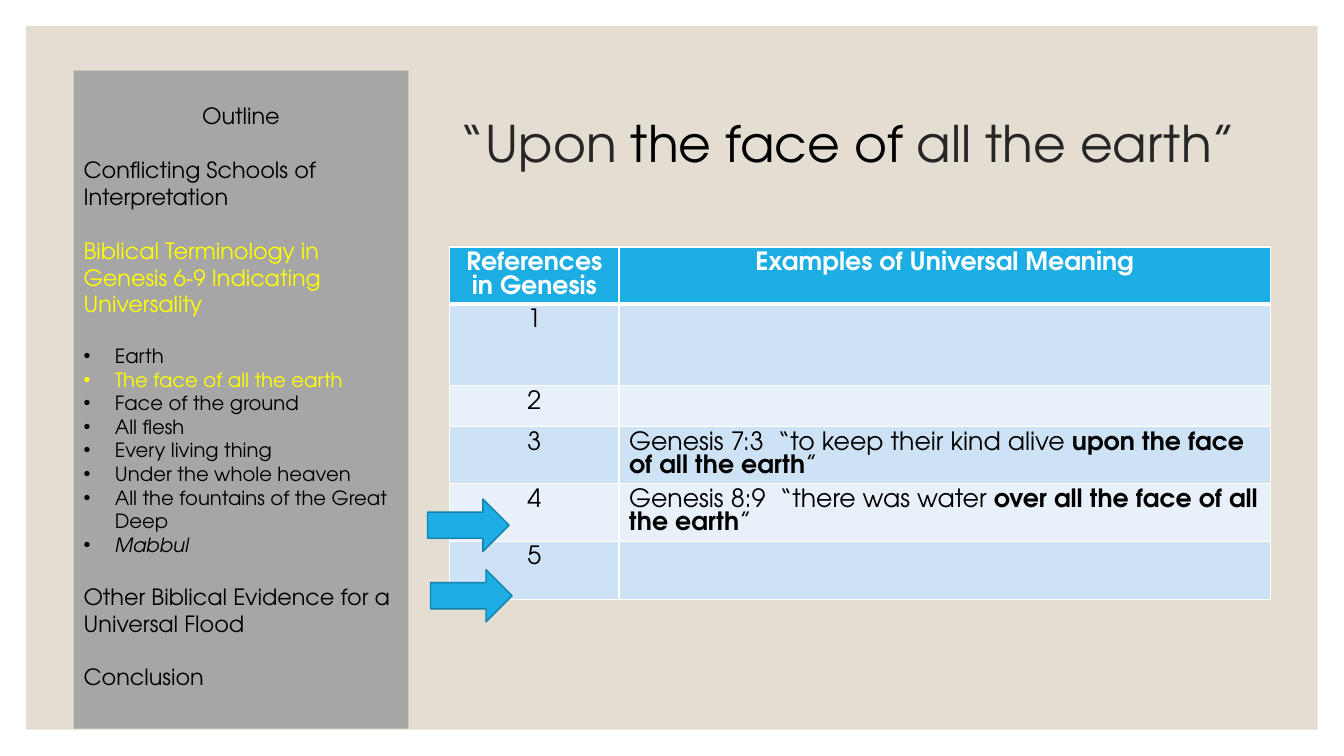
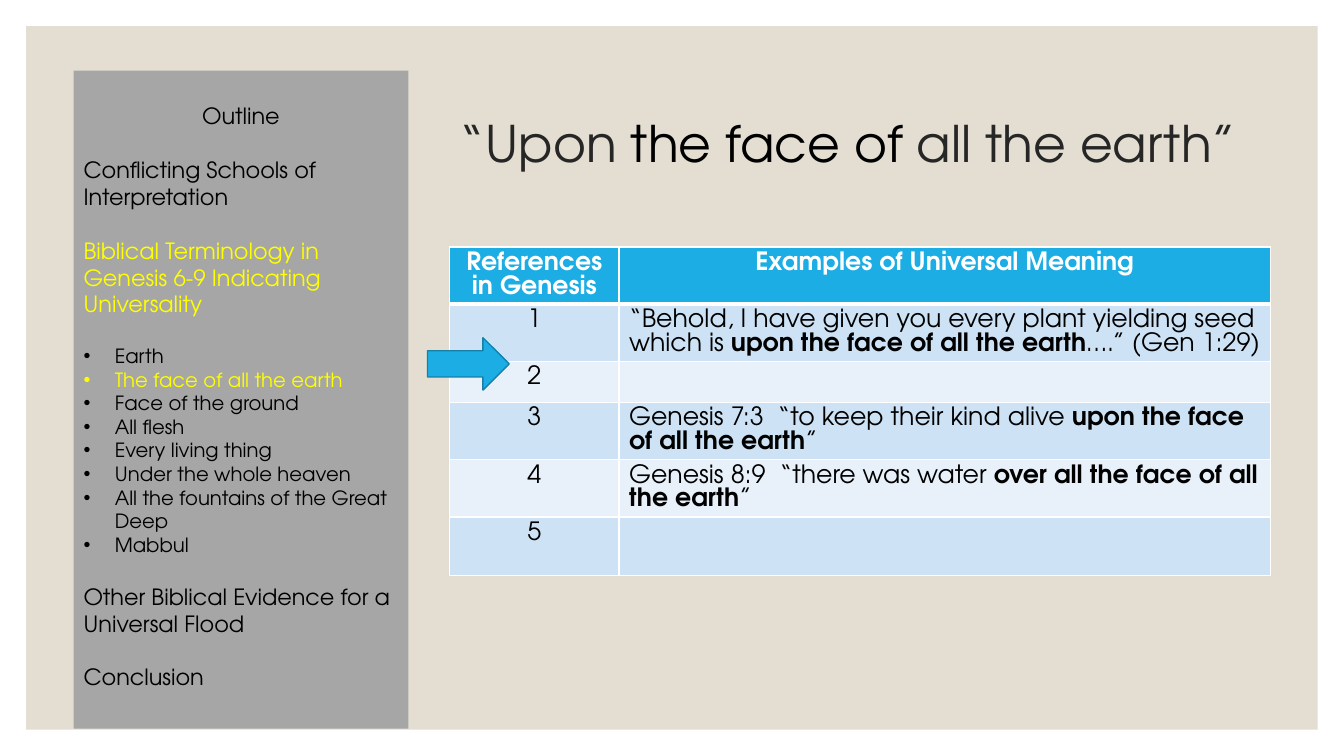
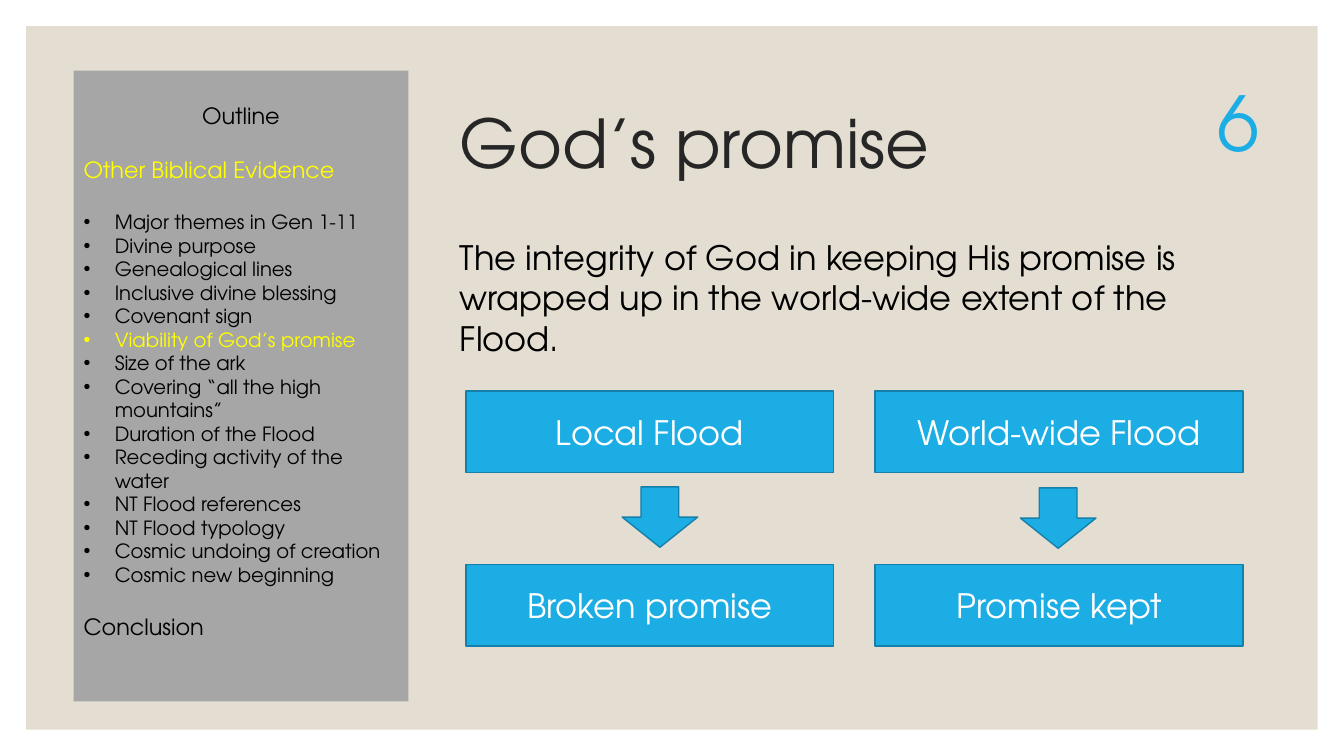
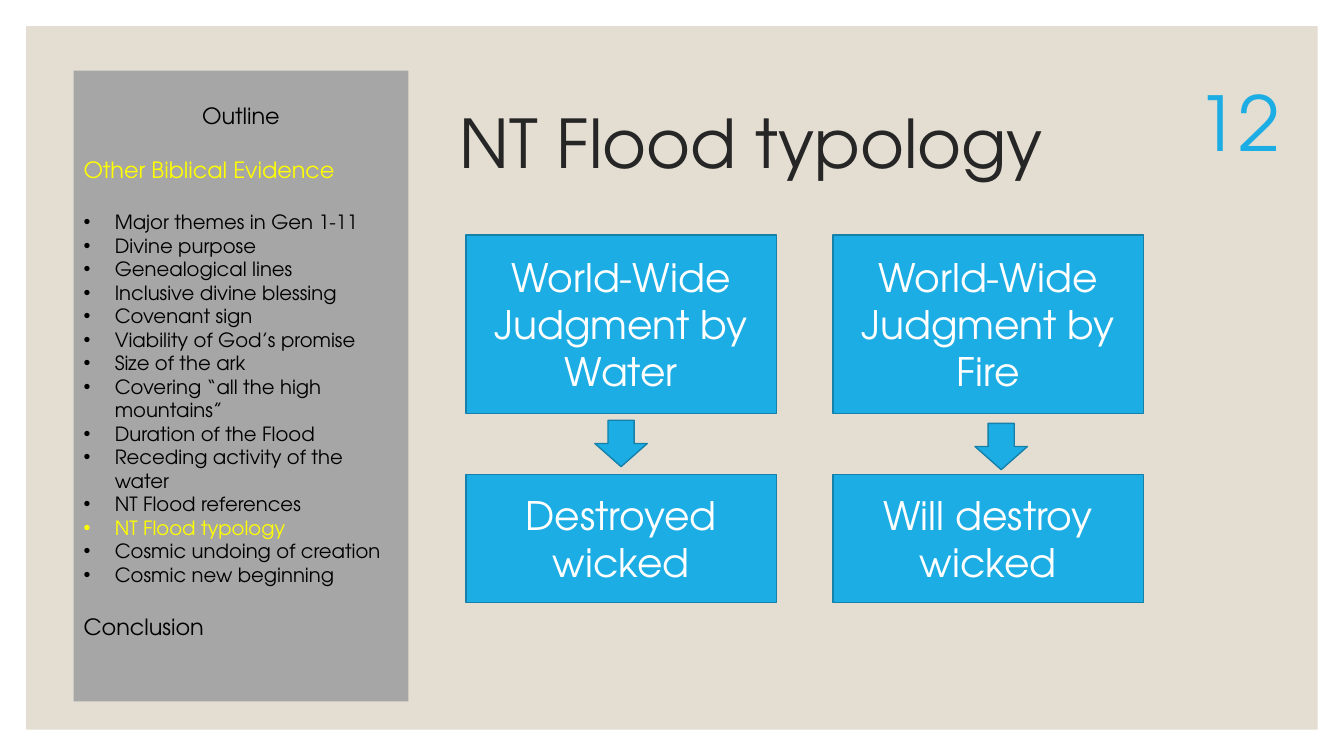
from lxml import etree
from pptx import Presentation
from pptx.dml.color import RGBColor
from pptx.enum.shapes import MSO_SHAPE
from pptx.enum.text import MSO_ANCHOR, MSO_AUTO_SIZE, PP_ALIGN
from pptx.oxml.ns import qn
from pptx.util import Inches, Pt

RECTANGLE = MSO_SHAPE.RECTANGLE
RIGHT_ARROW = MSO_SHAPE.RIGHT_ARROW
DOWN_ARROW = MSO_SHAPE.DOWN_ARROW
TOP, MIDDLE = MSO_ANCHOR.TOP, MSO_ANCHOR.MIDDLE
LEFT, CENTER = PP_ALIGN.LEFT, PP_ALIGN.CENTER
NO_FIT = MSO_AUTO_SIZE.NONE

FONT = "TeX Gyre Adventor"
COLORS = {
    "panel": "E3DED1", "sidebar": "A6A6A6", "blue": "1CADE4", "edge": "1580A9",
    "title": "262626", "black": "000000", "white": "FFFFFF", "highlight": "FFFF00",
    "odd row": "CDE3F5", "even row": "E8F1FA",
}
SIDEBAR_GAP = Pt(19.2)


def add_run(para, text, size, color, bold=False, italic=False):
    run = para.add_run()
    run.text = text
    run.font.name = FONT
    run.font.size = Pt(size)
    run.font.bold = bold
    run.font.italic = italic
    run.font.color.rgb = RGBColor.from_string(COLORS[color])


def add_box(slide, kind, left, top, width, height, fill="blue", line="edge"):
    """Add a flat preset shape, measured in inches; line None means no outline."""
    box = slide.shapes.add_shape(
        kind, Inches(left), Inches(top), Inches(width), Inches(height))
    box.shadow.inherit = False
    box.fill.solid()
    box.fill.fore_color.rgb = RGBColor.from_string(COLORS[fill])
    if line:
        box.line.color.rgb = RGBColor.from_string(COLORS[line])
        box.line.width = Pt(1)
    else:
        box.line.fill.background()
    return box


# Outline entries: (text, is a bullet)
TERMS_OUTLINE = [
    ("Conflicting Schools of Interpretation", False),
    ("Biblical Terminology in Genesis 6-9 Indicating Universality", False),
    ("Earth", True),
    ("The face of all the earth", True),
    ("Face of the ground", True),
    ("All flesh", True),
    ("Every living thing", True),
    ("Under the whole heaven", True),
    ("All the fountains of the Great Deep", True),
    ("Mabbul", True),
    ("Other Biblical Evidence for a Universal Flood", False),
    ("Conclusion", False),
]
EVIDENCE_OUTLINE = [
    ("Other Biblical Evidence", False),
    ("Major themes in Gen 1-11", True),
    ("Divine purpose", True),
    ("Genealogical lines", True),
    ("Inclusive divine blessing", True),
    ("Covenant sign", True),
    ("Viability of God’s promise", True),
    ("Size of the ark", True),
    ("Covering “all the high mountains”", True),
    ("Duration of the Flood", True),
    ("Receding activity of the water", True),
    ("NT Flood references", True),
    ("NT Flood typology", True),
    ("Cosmic undoing of creation", True),
    ("Cosmic new beginning", True),
    ("Conclusion", False),
]
TERMS_TITLE = [("“Upon ", "title"), ("the face of ", "black"), ("all the earth”", "title")]
TERMS_HIGHLIGHTS = {TERMS_OUTLINE[1][0], "The face of all the earth"}

# Verses: text before, bold phrase, text after
GENESIS_1 = ("“Behold, I have given you every plant yielding seed which is ",
             "upon the face of all the earth", "….” (Gen 1:29)")
GENESIS_7 = ("Genesis 7:3  “to keep their kind alive ",
             "upon the face of all the earth", "”")
GENESIS_8 = ("Genesis 8:9  “there was water ",
             "over all the face of all the earth", "”")

PAGES = [
    {
        "title": TERMS_TITLE, "title size": 36,
        "outline": TERMS_OUTLINE, "highlights": TERMS_HIGHLIGHTS, "italics": {"Mabbul"},
        "sidebar height": 6.53,
        "verses": [(), (), GENESIS_7, GENESIS_8, ()],
        "row heights": [0.56, 0.81, 0.4, 0.57, 0.57, 0.58],
        "arrows": [(RIGHT_ARROW, 4.24, 4.95, 0.81, 0.52),
                   (RIGHT_ARROW, 4.27, 5.65, 0.81, 0.52)],
    },
    {
        "title": TERMS_TITLE, "title size": 36,
        "outline": TERMS_OUTLINE, "highlights": TERMS_HIGHLIGHTS,
        "sidebar height": 6.53,
        "verses": [GENESIS_1, (), GENESIS_7, GENESIS_8, ()],
        "row heights": [0.56, 0.57, 0.4, 0.57, 0.57, 0.58],
        "arrows": [(RIGHT_ARROW, 4.24, 3.35, 0.81, 0.52)],
    },
    {
        "title": [("God’s promise", "title")], "title size": 48,
        "outline": EVIDENCE_OUTLINE,
        "highlights": {"Other Biblical Evidence", "Viability of God’s promise"},
        "sidebar height": 6.26,
        "body": "The integrity of God in keeping His promise is wrapped up in the "
                "world-wide extent of the Flood.",
        "number": "6", "number left": 11.97, "number width": 0.62,
        "box size": 24, "box width": 3.65, "box gap": 0.41,
        "box rows": [(3.88, 0.81, ["Local Flood", "World-wide Flood"]),
                     (5.6, 0.81, ["Broken promise", "Promise kept"])],
        "arrows": [(DOWN_ARROW, 6.17, 4.83, 0.75, 0.6),
                   (DOWN_ARROW, 10.12, 4.84, 0.75, 0.6)],
    },
    {
        "title": [("NT Flood typology", "title")], "title size": 48,
        "outline": EVIDENCE_OUTLINE,
        "highlights": {"Other Biblical Evidence", "NT Flood typology"},
        "sidebar height": 6.26,
        "number": "12", "number left": 11.76, "number width": 1.04,
        "box size": 28, "box width": 3.08, "box gap": 0.56,
        "box rows": [(2.33, 1.77, ["World-Wide\nJudgment by Water",
                                   "World-Wide Judgment by Fire"]),
                     (4.71, 1.27, ["Destroyed\nwicked", "Will destroy\nwicked"])],
        "arrows": [(DOWN_ARROW, 5.9, 4.17, 0.52, 0.46),
                   (DOWN_ARROW, 9.67, 4.2, 0.52, 0.46)],
    },
]

deck = Presentation()
deck.slide_width, deck.slide_height = Inches(13.33), Inches(7.5)
master = deck.slide_master
master_title = master.placeholders[0]
master_title.left, master_title.top = Inches(4.46), Inches(0.7)
master_title.width, master_title.height = Inches(8.14), Inches(1.51)

for page_index, page in enumerate(PAGES):
    slide = deck.slides.add_slide(deck.slide_layouts[1 if "body" in page else 5])

    if page_index == 0:
        # The background panel lives on the master, behind everything
        panel = add_box(slide, RECTANGLE, 0.26, 0.26, 12.81, 6.98, "panel", None)
        panel.element.nvSpPr.cNvPr.set("id", "20")
        master.shapes.element.insert(2, panel.element)

    title_frame = slide.shapes.title.text_frame
    title_frame.vertical_anchor = MIDDLE
    title_frame.auto_size = NO_FIT
    para = title_frame.paragraphs[0]
    para.alignment = LEFT
    para.line_spacing = 0.9
    for text, color in page["title"]:
        add_run(para, text, page["title size"], color)

    if "body" in page:
        body = slide.placeholders[1]
        body.left, body.top = Inches(4.46), Inches(2.3)
        body.width, body.height = Inches(8.14), Inches(4.43)
        body.text_frame.auto_size = NO_FIT
        para = body.text_frame.paragraphs[0]
        para.space_before = Pt(9)
        properties = para._p.get_or_add_pPr()
        properties.set("marL", "0")
        properties.set("indent", "0")
        etree.SubElement(properties, qn("a:buNone"))
        add_run(para, page["body"], 24, "black")

    if "verses" in page:
        heights = page["row heights"]
        table = slide.shapes.add_table(
            len(heights), 2, Inches(4.46), Inches(2.45),
            Inches(8.14), Inches(sum(heights))).table
        table.columns[0].width, table.columns[1].width = Inches(1.68), Inches(6.46)
        rows = [(("References in Genesis",), ("Examples of Universal Meaning",))]
        rows += [((str(number),), verse) for number, verse in enumerate(page["verses"], 1)]
        for row_index, row in enumerate(rows):
            table.rows[row_index].height = Inches(heights[row_index])
            is_header = row_index == 0
            fill = "blue" if is_header else "odd row" if row_index % 2 else "even row"
            for column_index, parts in enumerate(row):
                cell = table.cell(row_index, column_index)
                cell.fill.solid()
                cell.fill.fore_color.rgb = RGBColor.from_string(COLORS[fill])
                if is_header:
                    border = etree.Element(qn("a:lnB"), w=str(Pt(3)))
                    border_fill = etree.SubElement(border, qn("a:solidFill"))
                    etree.SubElement(border_fill, qn("a:srgbClr"), val=COLORS["white"])
                    cell._tc.get_or_add_tcPr().insert(0, border)
                para = cell.text_frame.paragraphs[0]
                para.alignment = CENTER if is_header or column_index == 0 else LEFT
                for part_index, text in enumerate(parts):
                    add_run(para, text, 18, "white" if is_header else "black",
                            bold=is_header or part_index == 1)

    sidebar = add_box(slide, RECTANGLE, 0.73, 0.7, 3.32, page["sidebar height"],
                      "sidebar", None)
    frame = sidebar.text_frame
    frame.word_wrap = True
    frame.vertical_anchor = TOP
    frame.margin_top = Inches(0.05) + SIDEBAR_GAP
    para = frame.paragraphs[0]
    para.alignment = CENTER
    add_run(para, "Outline", 16, "black")
    after_bullet = False
    for text, is_bullet in page["outline"]:
        para = frame.add_paragraph()
        para.alignment = LEFT
        if not (is_bullet and after_bullet):
            para.space_before = SIDEBAR_GAP
        if is_bullet:
            properties = para._p.get_or_add_pPr()
            properties.set("marL", str(Inches(0.31)))
            properties.set("indent", str(-Inches(0.31)))
            etree.SubElement(properties, qn("a:buFont")).set("typeface", "Arial")
            etree.SubElement(properties, qn("a:buChar")).set("char", "•")
        add_run(para, text, 14 if is_bullet else 16,
                "highlight" if text in page["highlights"] else "black",
                italic=text in page.get("italics", ()))
        after_bullet = is_bullet

    if "number" in page:
        number_box = slide.shapes.add_textbox(
            Inches(page["number left"]), Inches(0.7),
            Inches(page["number width"]), Inches(1.01))
        number_box.text_frame.word_wrap = False
        para = number_box.text_frame.paragraphs[0]
        para.alignment = CENTER
        add_run(para, page["number"], 54, "blue")

    for top, height, labels in page.get("box rows", ()):
        for column, label in enumerate(labels):
            left = 4.62 + column * (page["box width"] + page["box gap"])
            box = add_box(slide, RECTANGLE, left, top, page["box width"], height)
            frame = box.text_frame
            frame.word_wrap = True
            frame.vertical_anchor = MIDDLE
            for line_index, text in enumerate(label.split("\n")):
                para = frame.add_paragraph() if line_index else frame.paragraphs[0]
                para.alignment = CENTER
                add_run(para, text, page["box size"], "white")

    for arrow in page["arrows"]:
        add_box(slide, *arrow)

deck.save("out.pptx")
